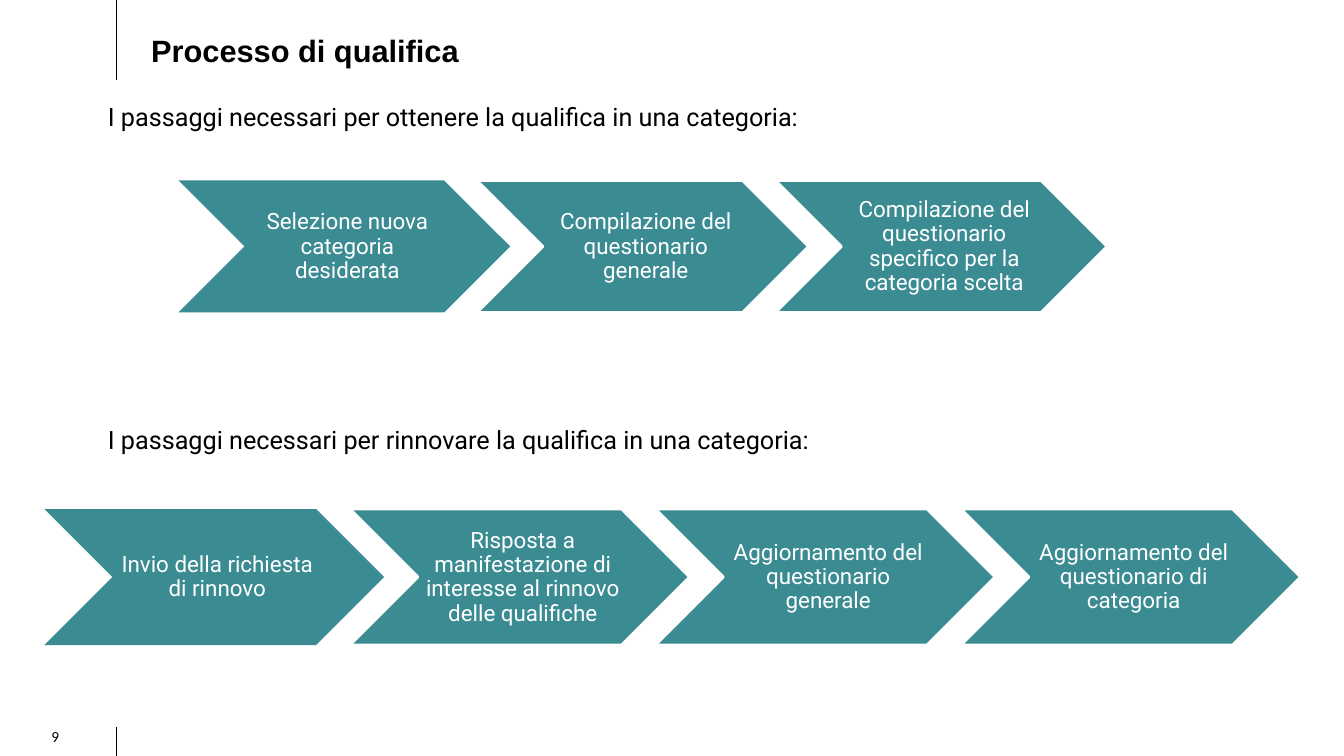
from lxml import etree
from pptx import Presentation
from pptx.dml.color import RGBColor
from pptx.enum.shapes import MSO_CONNECTOR, MSO_SHAPE
from pptx.enum.text import MSO_ANCHOR, MSO_AUTO_SIZE, PP_ALIGN
from pptx.oxml.ns import qn
from pptx.util import Inches, Pt

CHEVRON = MSO_SHAPE.CHEVRON
STRAIGHT = MSO_CONNECTOR.STRAIGHT
TOP, MIDDLE = MSO_ANCHOR.TOP, MSO_ANCHOR.MIDDLE
LEFT, CENTER = PP_ALIGN.LEFT, PP_ALIGN.CENTER
NO_AUTOFIT = MSO_AUTO_SIZE.NONE
COLORS = {"text": "000000", "step": "3B8B92", "light": "FFFFFF"}
TITLE_ONLY = 5
TEXT_SHIFT = 0.03

QUALIFY_STEPS = [
    ("Selezione nuova categoria desiderata", 1.67),
    ("Compilazione del questionario generale", 1.73),
    ("Compilazione del questionario specifico per la categoria scelta", 1.73),
]
RENEW_STEPS = [
    ("Invio della richiesta di rinnovo", 1.92),
    ("Risposta a manifestazione di interesse al rinnovo delle qualifiche", 1.95),
    ("Aggiornamento del questionario generale", 1.89),
    ("Aggiornamento del questionario di categoria", 1.89),
]


def color(name):
    return RGBColor.from_string(COLORS[name])


def set_text(frame, text, font, size, ink="text", align=LEFT, anchor=TOP,
             margins=(0, 0.01, 0, 0), bold=False):
    frame.word_wrap = True
    frame.auto_size = NO_AUTOFIT
    frame.vertical_anchor = anchor
    (frame.margin_left, frame.margin_top,
     frame.margin_right, frame.margin_bottom) = map(Inches, margins)
    para = frame.paragraphs[0]
    para.alignment = align
    span = para.add_run()
    span.text = text
    span.font.name = font
    span.font.size = Pt(size)
    span.font.bold = bold
    span.font.color.rgb = color(ink)
    return para


def add_label(page, box, text, font, size):
    label = page.shapes.add_textbox(*map(Inches, box))
    return set_text(label.text_frame, text, font, size)


def add_rule(page, x, top, bottom):
    rule = page.shapes.add_connector(
        STRAIGHT, Inches(x), Inches(top), Inches(x), Inches(bottom))
    rule.line.color.rgb = color("text")
    rule.line.width = Pt(0.75)
    etree.SubElement(rule._element.spPr, qn("a:effectLst"))


def add_header(page, box):
    left, top, width, height = box
    add_rule(page, left, top, top + height)
    title = page.shapes.title
    title.left, title.top = Inches(left + 0.19), Inches(top + 0.3)
    title.width, title.height = Inches(width), Inches(0.39)
    set_text(title.text_frame, "Processo di qualifica", "Arial", 22,
             margins=(0.15, 0.01, 0, 0), bold=True)


def add_footer(page, box):
    left, top, width, height = box
    add_rule(page, left + width, top, top + height)
    number = add_label(page, (left, top + 0.02, 0.18, 0.18), "9", "Calibri", 11)
    number.line_spacing = Pt(11.5)


def add_step(page, box, text, text_width, outlined):
    left, top, width, height = box
    step = page.shapes.add_shape(CHEVRON, *map(Inches, box))
    step.shadow.inherit = False
    step.fill.solid()
    step.fill.fore_color.rgb = color("step")
    if outlined:
        step.line.color.rgb = color("light")
        step.line.width = Pt(2)
    else:
        step.line.fill.background()
    side = (width - height - text_width) / 2
    para = set_text(step.text_frame, text, "Roboto", 16, "light", CENTER, MIDDLE,
                    (side + TEXT_SHIFT, 0, max(side - TEXT_SHIFT, 0), 0))
    para.line_spacing = Pt(17.3)


def add_process(page, box, pitch, step_width, steps):
    left, top, width, height = box
    for index, (text, text_width) in enumerate(steps):
        step_box = (left + index * pitch, top, step_width, height)
        add_step(page, step_box, text, text_width, outlined=index > 0)


def main():
    deck = Presentation()
    deck.slide_width, deck.slide_height = Inches(13.33), Inches(7.5)
    page = deck.slides.add_slide(deck.slide_layouts[TITLE_ONLY])
    add_header(page, (1.16, 0, 6.86, 0.79))
    add_label(page, (1.07, 1, 7.01, 0.33),
              "I passaggi necessari per ottenere la qualifica in una categoria:",
              "Roboto", 18)
    add_process(page, (1.77, 1.79, 9.21, 1.31), 2.96, 3.29, QUALIFY_STEPS)
    add_label(page, (1.07, 4.2, 7.2, 0.33),
              "I passaggi necessari per rinnovare la qualifica in una categoria:",
              "Roboto", 18)
    add_process(page, (0.44, 5.05, 12.45, 1.35), 3.03, 3.37, RENEW_STEPS)
    add_footer(page, (0.51, 7.21, 0.65, 0.29))
    deck.save("out.pptx")


if __name__ == "__main__":
    main()
